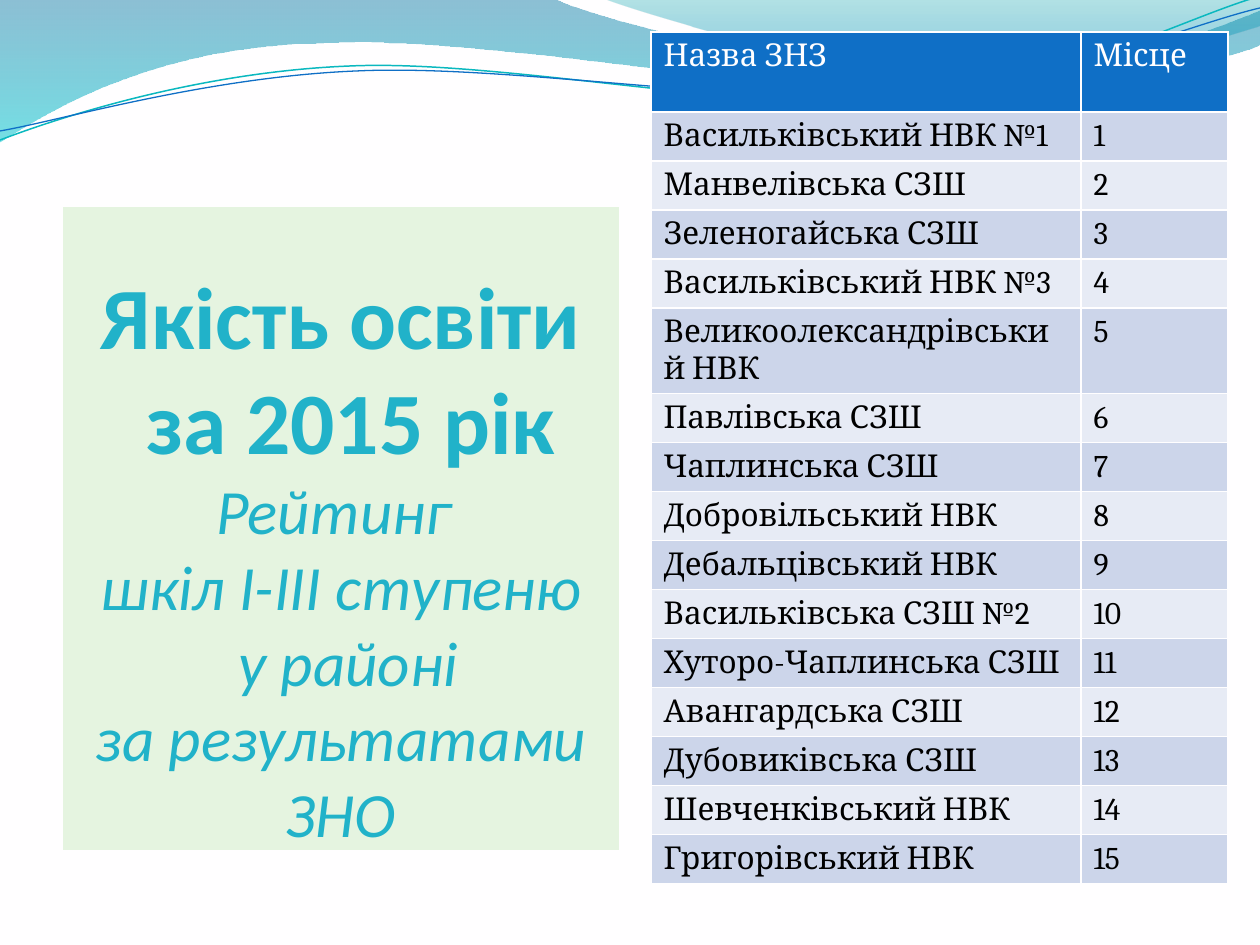
from copy import deepcopy
from dataclasses import dataclass

from lxml.etree import SubElement
from pptx import Presentation
from pptx.dml.color import RGBColor
from pptx.enum.text import MSO_ANCHOR, MSO_AUTO_SIZE, PP_ALIGN
from pptx.oxml.ns import qn
from pptx.util import Emu, Pt

PX = 914400 / 126

WHITE = RGBColor(0xFF, 0xFE, 0xFF)
BLACK = RGBColor(0x00, 0x00, 0x00)
BLUE = RGBColor(0x0F, 0x6F, 0xC6)
TEAL = RGBColor(0x0A, 0xB8, 0xBF)
TITLE_TEXT = RGBColor(0x21, 0xB2, 0xC9)
TITLE_FILL = RGBColor(0xE5, 0xF4, 0xE0)
BANDS = (RGBColor(0xCC, 0xD5, 0xEA), RGBColor(0xE7, 0xEB, 0xF5))


@dataclass
class Stop:
    position: float
    color: RGBColor
    opacity: int


@dataclass
class Wave:
    """Each segment holds one point (line) or three points (Bezier curve)."""
    start: tuple
    segments: list
    stops: tuple = ()
    line: RGBColor = None
    width: float = 0


@dataclass
class TitlePart:
    lines: tuple
    size: int
    bold: bool = False
    italic: bool = False


WAVES = [
    Wave((0, 0), [
        [(554, -1)],
        [(600, 21), (837, 79), (955, 79)],
        [(1075, 79), (1207, 33), (1260, 11)],
        [(1261, 45)],
        [(1239, 55), (1096, 96), (940, 95)],
        [(784, 95), (481, 35), (324, 43)],
        [(163, 45), (58, 105), (-1, 142)],
        [(0, 0)],
    ], stops=(Stop(0, RGBColor(0x00, 0x74, 0xA1), 45),
              Stop(1, RGBColor(0x00, 0xC6, 0xCF), 55))),
    Wave((604, -1), [
        [(641, 14), (859, 78), (969, 82)],
        [(1079, 87), (1211, 40), (1260, 26)],
        [(1260, 0)],
        [(604, -1)],
    ], stops=(Stop(0, RGBColor(0x00, 0xA1, 0xA9), 30),
              Stop(0.8, RGBColor(0x00, 0x8B, 0xBF), 45))),
    Wave((0, 140), [
        [(60, 117), (199, 72), (349, 66)],
        [(497, 59), (747, 112), (898, 101)],
        [(1050, 89), (1182, 19), (1257, -3)],
    ], line=TEAL, width=0.85),
    Wave((0, 131), [
        [(59, 121), (207, 77), (357, 71)],
        [(508, 64), (752, 106), (903, 95)],
        [(1053, 84), (1184, 26), (1260, 8)],
    ], line=BLUE, width=0.75),
]

TITLE = [
    TitlePart(("Якість освіти", " за 2015 рік", ""), 50, bold=True),
    TitlePart(("Рейтинг ", "шкіл І-ІІІ ступеню", " у районі",
               "за результатами ЗНО"), 36, italic=True),
]

HEADER = ("Назва ЗНЗ", "Місце")
SCHOOLS = [
    "Васильківський НВК №1", "Манвелівська СЗШ", "Зеленогайська СЗШ",
    "Васильківський НВК №3", "Великоолександрівський НВК",
    "Павлівська СЗШ", "Чаплинська СЗШ", "Добровільський НВК",
    "Дебальцівський НВК", "Васильківська СЗШ №2",
    "Хуторо-Чаплинська СЗШ", "Авангардська СЗШ", "Дубовиківська СЗШ",
    "Шевченківський НВК", "Григорівський НВК",
]


def px(n: int) -> Emu:
    return Emu(round(n * PX))


def bend(sp, segments: list) -> None:
    """Turn the straight pieces of a freeform into Bezier curves."""
    for piece, segment in zip(sp._element.xpath(".//a:path/a:lnTo"), segments):
        if len(segment) == 1:
            continue
        piece.tag = qn("a:cubicBezTo")
        controls = [SubElement(piece, qn("a:pt"), x=str(px(x) - sp.left), y=str(px(y) - sp.top))
                    for x, y in segment[:2]]
        for i, control in enumerate(controls):
            piece.insert(i, control)


def draw_wave(slide, wave: Wave) -> None:
    ends = [(px(x), px(y)) for x, y in [wave.start] + [s[-1] for s in wave.segments]]
    builder = slide.shapes.build_freeform(*ends[0], scale=1.0)
    builder.add_line_segments(ends[1:], close=bool(wave.stops))
    sp = builder.convert_to_shape()
    bend(sp, wave.segments)
    sp.shadow.inherit = False
    if not wave.stops:
        sp.fill.background()
        sp.line.color.rgb = wave.line
        sp.line.width = Pt(wave.width)
        return
    sp.line.fill.background()
    sp.fill.gradient()
    sp.fill.gradient_angle = 270
    for gradient_stop, stop in zip(sp.fill.gradient_stops, wave.stops):
        gradient_stop.position = stop.position
        gradient_stop.color.rgb = stop.color
    for clr, stop in zip(sp._element.xpath(".//a:gs/a:srgbClr"), wave.stops):
        SubElement(clr, qn("a:alpha"), val=str(stop.opacity * 1000))


def add_title_part(p, part: TitlePart) -> None:
    for i, text in enumerate(part.lines):
        if i:
            p.add_line_break()
            # The break keeps the size of its line
            p._p[-1].append(deepcopy(r._r.rPr))
        if text:
            r = p.add_run()
            r.text = text
            r.font.name = "Calibri"
            r.font.size = Pt(part.size)
            r.font.bold, r.font.italic = part.bold, part.italic
            r.font.color.rgb = TITLE_TEXT


def draw_title(slide) -> None:
    sp = slide.shapes.title
    slide.shapes._spTree.append(sp._element)  # in front of the waves
    sp.left, sp.top, sp.width, sp.height = px(63), px(207), px(556), px(643)
    sp.fill.solid()
    sp.fill.fore_color.rgb = TITLE_FILL
    tf = sp.text_frame
    tf.word_wrap = True
    tf.auto_size = MSO_AUTO_SIZE.NONE
    tf.vertical_anchor = MSO_ANCHOR.BOTTOM
    tf.margin_left = tf.margin_right = tf.margin_bottom = 0
    tf.margin_top = px(6)
    p = tf.paragraphs[0]
    p.alignment = PP_ALIGN.CENTER
    for part in TITLE:
        add_title_part(p, part)


def set_borders(cell) -> None:
    tcPr = cell._tc.get_or_add_tcPr()
    for side in "LRTB":
        ln = SubElement(tcPr, qn(f"a:ln{side}"), w=str(Pt(1)))
        fill = SubElement(ln, qn("a:solidFill"))
        SubElement(fill, qn("a:srgbClr"), val=str(WHITE))


def draw_cell(cell, text: str, fill: RGBColor, color: RGBColor) -> None:
    set_borders(cell)
    cell.fill.solid()
    cell.fill.fore_color.rgb = fill
    r = cell.text_frame.paragraphs[0].add_run()
    r.text = text
    r.font.name = "Cambria"
    r.font.size = Pt(18)
    r.font.bold = False
    r.font.color.rgb = color


def draw_table(slide) -> None:
    rows = [HEADER] + [(name, str(place)) for place, name in enumerate(SCHOOLS, 1)]
    heights = [80] + [45] * len(SCHOOLS)
    frame = slide.shapes.add_table(len(rows), 2, px(651), px(32), px(577), px(sum(heights)))
    table = frame.table
    for column, width in zip(table.columns, (430, 147)):
        column.width = px(width)
    for i, (row, height) in enumerate(zip(rows, heights)):
        table.rows[i].height = px(height)
        look = (BANDS[(i - 1) % 2], BLACK) if i else (BLUE, WHITE)
        for j, text in enumerate(row):
            draw_cell(table.cell(i, j), text, *look)
    frame.height = px(873)


def main() -> None:
    prs = Presentation()
    prs.slide_width, prs.slide_height = px(1260), px(945)
    slide = prs.slides.add_slide(prs.slide_layouts[5])
    slide.background.fill.solid()
    slide.background.fill.fore_color.rgb = WHITE
    # Waves along the top edge
    for wave in WAVES:
        draw_wave(slide, wave)
    # Heading on the left, ranking on the right
    draw_title(slide)
    draw_table(slide)
    prs.save("out.pptx")


if __name__ == "__main__":
    main()
